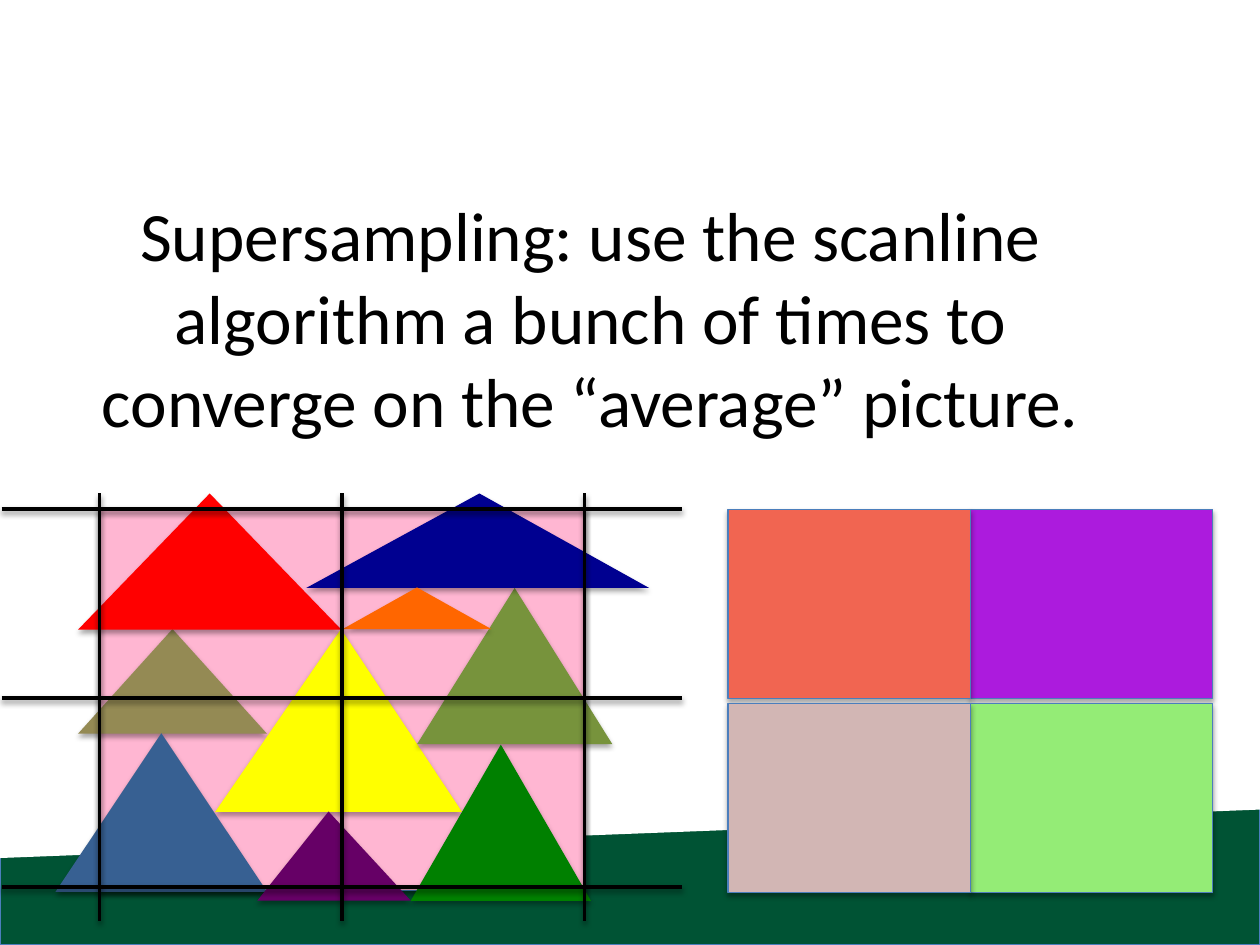
from lxml import etree
from pptx import Presentation
from pptx.dml.color import RGBColor
from pptx.enum import shapes, text
from pptx.oxml import ns
from pptx.util import Pt

COLORS = {
    "ground": "005334", "white": "FFFFFF", "black": "000000", "outline": "4B7EBC",
    "pink": "FFB6D2", "khaki": "948A54", "yellow": "FFFF00", "olive": "77933C",
    "steel": "376092", "plum": "660066", "green": "008000", "red": "FF0000",
    "navy": "000090", "orange": "FF6600", "coral": "F16551", "violet": "AC1BDD",
    "taupe": "D2B6B4", "lime": "94EC76",
}
KINDS = shapes.MSO_SHAPE


def add_shadow(shape, distance, opacity):
    effects = etree.SubElement(shape._element.spPr, ns.qn("a:effectLst"))
    shadow = etree.SubElement(
        effects, ns.qn("a:outerShdw"), blurRad=str(Pt(3.1)), dist=str(Pt(distance)),
        dir="5400000", rotWithShape="0")
    color = etree.SubElement(shadow, ns.qn("a:srgbClr"), val=COLORS["black"])
    etree.SubElement(color, ns.qn("a:alpha"), val=str(opacity * 1000))


def add_figure(parent, kind, box, fill=None, line=None, shadow=True):
    shape = parent.add_shape(kind, *[Pt(value) for value in box])
    if fill:
        shape.fill.solid()
        shape.fill.fore_color.rgb = RGBColor.from_string(COLORS[fill])
    else:
        shape.fill.background()
    if line:
        shape.line.color.rgb = RGBColor.from_string(COLORS[line])
        shape.line.width = Pt(0.75)
    else:
        shape.line.fill.background()
    if shadow:
        add_shadow(shape, 1.8, 35)
    else:
        shape.shadow.inherit = False
    return shape


presentation = Presentation()
presentation.slide_width, presentation.slide_height = Pt(720), Pt(540)
slide = presentation.slides.add_slide(presentation.slide_layouts[6])

add_figure(slide.shapes, KINDS.RECTANGLE, (0, 404, 720, 136), "ground", "outline")
slope = add_figure(slide.shapes, KINDS.PARALLELOGRAM, (276.5, 46.8, 167, 720), "white", shadow=False)
slope.adjustments[0] = 0.166
slope.rotation = 90
slope._element.spPr.xfrm.set("flipH", "1")

title = slide.shapes.add_textbox(Pt(16.5), Pt(142), Pt(642), Pt(78))
title.text_frame.word_wrap = True
title.text_frame.vertical_anchor = text.MSO_ANCHOR.MIDDLE
paragraph = title.text_frame.paragraphs[0]
paragraph.text = "Supersampling: use the scanline algorithm a bunch of times to converge on the “average” picture."
paragraph.alignment = text.PP_ALIGN.CENTER
paragraph.font.name = "Calibri"
paragraph.font.size = Pt(39.6)
paragraph.font.color.rgb = RGBColor.from_string(COLORS["black"])

cell_width, cell_height = 138.5, 108
grid_left, grid_top = 57, 291
grid_size = (2 * cell_width, 2 * cell_height)
scene = slide.shapes.add_group_shape().shapes
add_figure(scene, KINDS.RECTANGLE, (grid_left, grid_top, 277, 218), "pink", "outline")

triangles = [
    ("khaki", (44.6, 359.5, 108, 59.8), 0.5),
    ("yellow", (123, 359.5, 141, 104.4), 0.51),
    ("olive", (238.3, 336, 111.6, 89.3), 0.5),
    ("steel", (31.7, 419, 121, 90.7), 0.5),
    ("plum", (147, 463.7, 87.8, 51), 0.464),
    ("green", (234.7, 425.5, 103, 89.3), 0.5),
    ("red", (44.6, 282, 150.5, 77.8), 0.5),
    ("navy", (175, 282, 196, 54), 0.505),
    ("orange", (195.8, 335.7, 85, 23.8), 0.5),
]
for color, box, apex in triangles:
    triangle = add_figure(scene, KINDS.ISOSCELES_TRIANGLE, box, color)
    triangle.adjustments[0] = apex

add_figure(scene, KINDS.RECTANGLE, (grid_left, grid_top, *grid_size), line="black")

grid_lines = []
for index in range(3):
    x = grid_left + index * cell_width
    y = grid_top + index * cell_height
    grid_lines += [(1, y, 390, y), (x, 282, x, 526.5)]
for ends in grid_lines:
    line = scene.add_connector(shapes.MSO_CONNECTOR.STRAIGHT, *[Pt(value) for value in ends])
    line.line.color.rgb = RGBColor.from_string(COLORS["black"])
    line.line.width = Pt(2)
    add_shadow(line, 1.6, 38)

swatch_left, row_step = 416, 111
for row, colors in enumerate([("coral", "violet"), ("taupe", "lime")]):
    for column, color in reversed(list(enumerate(colors))):
        box = (swatch_left + column * cell_width, grid_top + row * row_step, cell_width, cell_height)
        add_figure(slide.shapes, KINDS.RECTANGLE, box, color, "outline")

presentation.save("out.pptx")
